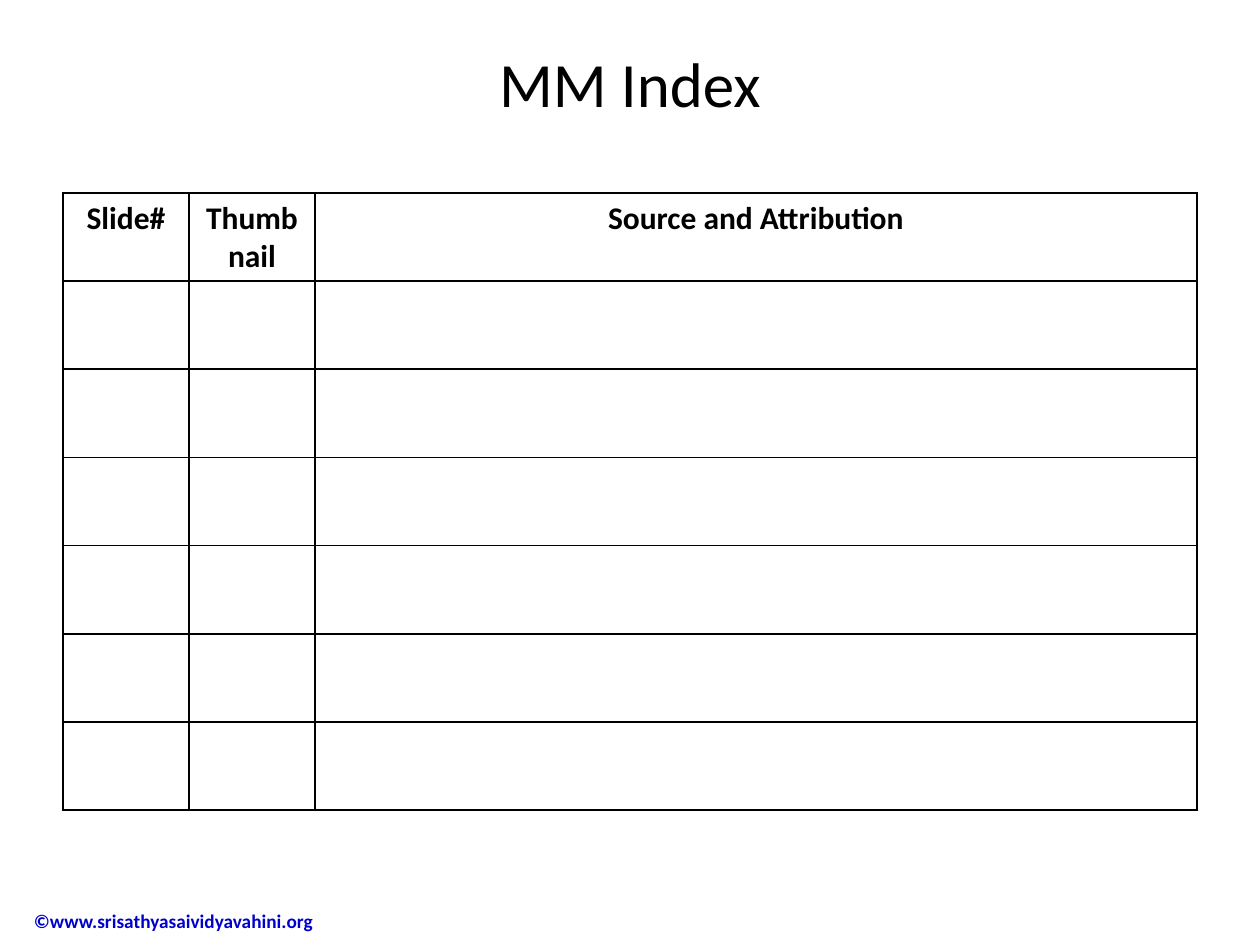
from dataclasses import dataclass

from lxml import etree
from pptx import Presentation
from pptx.dml.color import RGBColor
from pptx.enum.text import MSO_ANCHOR, PP_ALIGN
from pptx.oxml.ns import qn
from pptx.util import Inches, Pt

CENTER, LEFT = PP_ALIGN.CENTER, PP_ALIGN.LEFT
TOP, MIDDLE = MSO_ANCHOR.TOP, MSO_ANCHOR.MIDDLE
TITLE_ONLY = 5
COLORS = {"text": "000000", "border": "000000", "footer": "0000CC"}
BORDER_WIDTH = Pt(1)
ROW_COUNT = 7
ROW_HEIGHT = 0.7


@dataclass
class Column:
    heading: str
    width: float


@dataclass
class TextStyle:
    size: float
    color: str = "text"
    bold: bool = False
    align: PP_ALIGN = CENTER


COLUMNS = [
    Column("Slide#", 1),
    Column("Thumbnail", 1),
    Column("Source and Attribution", 7),
]


def write_text(frame, text: str, style: TextStyle) -> None:
    para = frame.paragraphs[0]
    para.alignment = style.align
    span = para.add_run()
    span.text = text
    span.font.name = "Calibri"
    span.font.size = Pt(style.size)
    span.font.bold = style.bold
    span.font.color.rgb = RGBColor.from_string(COLORS[style.color])


def draw_borders(cell) -> None:
    properties = cell._tc.get_or_add_tcPr()
    for side in ("lnL", "lnR", "lnT", "lnB"):
        line = etree.SubElement(properties, qn(f"a:{side}"), w=str(BORDER_WIDTH))
        fill = etree.SubElement(line, qn("a:solidFill"))
        etree.SubElement(fill, qn("a:srgbClr"), val=COLORS["border"])


def add_index_table(slide, columns: list[Column]) -> None:
    total_width = sum(column.width for column in columns)
    table = slide.shapes.add_table(
        ROW_COUNT, len(columns), Inches(0.5), Inches(1.53),
        Inches(total_width), Inches(ROW_COUNT * ROW_HEIGHT),
    ).table
    table.horz_banding = False
    for row in table.rows:
        row.height = Inches(ROW_HEIGHT)
    for index, column in enumerate(columns):
        table.columns[index].width = Inches(column.width)
        write_text(table.cell(0, index).text_frame, column.heading,
                   TextStyle(18, bold=True))
    for cell in table.iter_cells():
        draw_borders(cell)
        cell.fill.background()


def add_footer(slide) -> None:
    box = slide.shapes.add_textbox(Inches(-0.33), Inches(7.1), Inches(3.02), Inches(0.41))
    frame = box.text_frame
    frame.word_wrap = True
    frame.vertical_anchor = MIDDLE
    properties = frame.paragraphs[0]._p.get_or_add_pPr()
    properties.set("marL", str(Inches(0.5)))
    properties.set("indent", "0")
    write_text(frame, "©www.srisathyasaividyavahini.org",
               TextStyle(11, "footer", bold=True, align=LEFT))


def main() -> None:
    deck = Presentation()
    deck.slide_width, deck.slide_height = Inches(10), Inches(7.5)
    slide = deck.slides.add_slide(deck.slide_layouts[TITLE_ONLY])

    # Footer
    add_footer(slide)

    # Title
    title = slide.shapes.title
    title.left, title.top = Inches(0.5), Inches(0.3)
    title.width, title.height = Inches(9), Inches(1.25)
    title.text_frame.vertical_anchor = TOP
    write_text(title.text_frame, "MM Index", TextStyle(36))

    # Index table
    add_index_table(slide, COLUMNS)

    deck.save("out.pptx")


if __name__ == "__main__":
    main()
